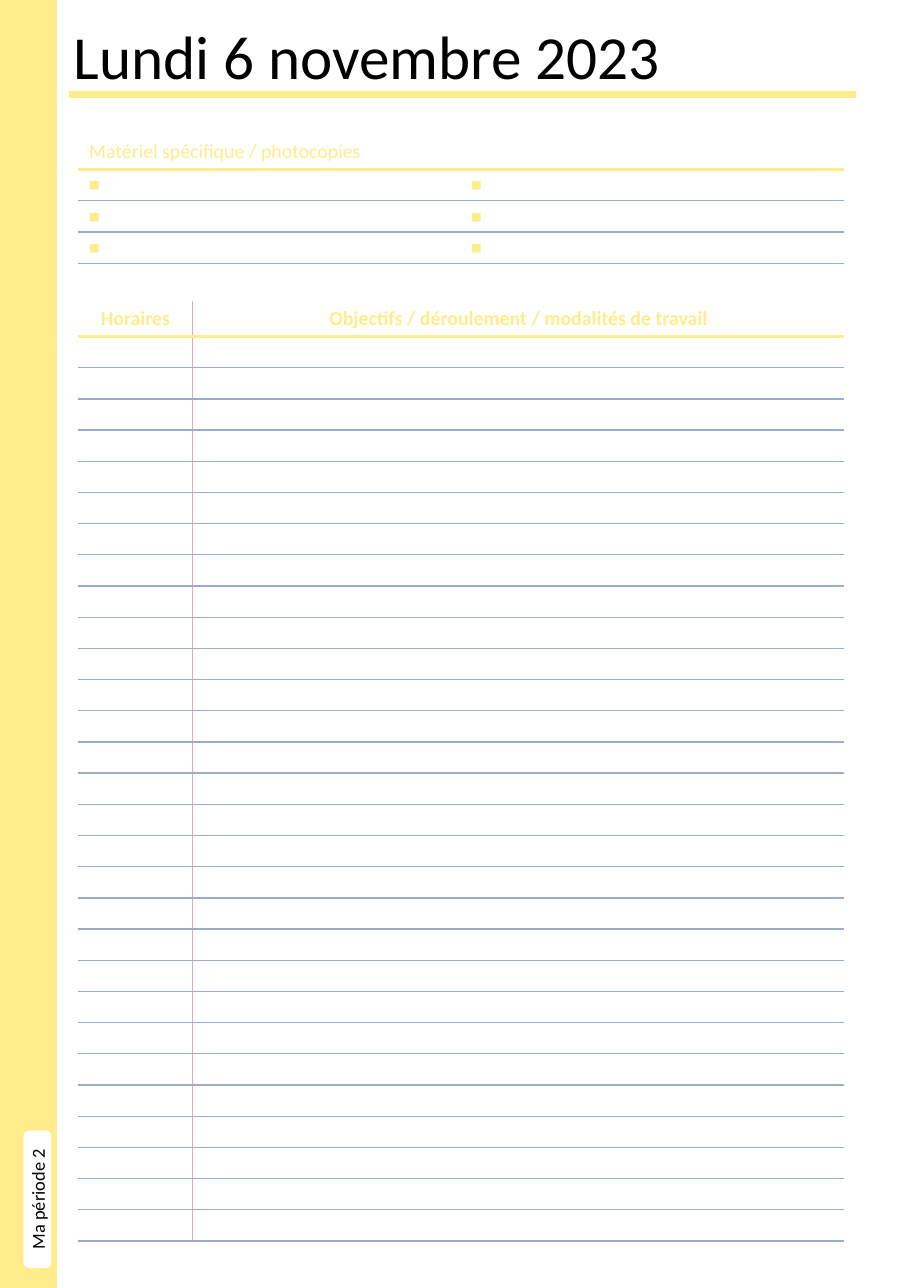
from dataclasses import dataclass

import pptx
import pptx.dml.color
import pptx.enum.dml
import pptx.enum.shapes
import pptx.enum.text
import pptx.oxml
import pptx.oxml.ns
import pptx.util

Pt = pptx.util.Pt
RGBColor = pptx.dml.color.RGBColor
ALIGN = pptx.enum.text.PP_ALIGN
ANCHOR = pptx.enum.text.MSO_ANCHOR
SHAPE = pptx.enum.shapes.MSO_SHAPE

YELLOW = RGBColor(0xFE, 0xED, 0x8A)
BLUE = RGBColor(0x9A, 0xAD, 0xCD)
PINK = RGBColor(0xDC, 0xA9, 0xCC)
WHITE = RGBColor(0xFF, 0xFF, 0xFF)
BLACK = RGBColor(0, 0, 0)

FONT = "Calibri"
PAGE_W, PAGE_H = 595.44, 841.68
TABLE_LEFT = 51.12
LINE_H = 20.4
BULLET = "◼︎"


@dataclass
class Grid:
    """A ruled table: one header row over evenly spaced writing lines."""
    top: float
    header_h: float
    col_widths: tuple[float, ...]
    headers: tuple[str, ...]
    lines: int
    mark: str = ""
    bold: bool = False
    align: ALIGN = ALIGN.LEFT
    divider: RGBColor = WHITE


GRIDS = [
    Grid(87.84, 23, (249.84, 250.56), ("Matériel spécifique / photocopies", ""),
         lines=3, mark=BULLET),
    Grid(197.28, 22.6, (74.88, 425.52),
         ("Horaires", "Objectifs / déroulement / modalités de travail"),
         lines=29, bold=True, align=ALIGN.CENTER, divider=PINK),
]


def add_run(p, text: str, size: float, color: RGBColor, bold: bool = False) -> None:
    r = p.add_run()
    r.text = text
    r.font.name = FONT
    r.font.size = Pt(size)
    r.font.bold = bold
    r.font.color.rgb = color


def set_margins(target, x: float, y: float) -> None:
    target.margin_left = target.margin_right = Pt(x)
    target.margin_top = target.margin_bottom = Pt(y)


def set_borders(cell, borders: dict[str, tuple[RGBColor, float]]) -> None:
    """Borders are keyed by side, in the order L, R, T, B."""
    ns = pptx.oxml.ns.nsdecls("a")
    tcPr = cell._tc.get_or_add_tcPr()
    for i, (side, (color, width)) in enumerate(borders.items()):
        tcPr.insert(i, pptx.oxml.parse_xml(
            f'<a:ln{side} {ns} w="{Pt(width)}"><a:solidFill>'
            f'<a:srgbClr val="{color}"/></a:solidFill></a:ln{side}>'))


def fill_cell(cell, text: str, size: float, bold: bool, align: ALIGN) -> None:
    cell.fill.solid()
    cell.fill.fore_color.rgb = WHITE
    cell.vertical_anchor = ANCHOR.MIDDLE
    set_margins(cell, 7.2, 3)
    p = cell.text_frame.paragraphs[0]
    p.alignment = align
    if text:
        add_run(p, text, size, YELLOW, bold)
    else:
        # Keeps an empty line from growing to the default text size
        p._p.append(pptx.oxml.parse_xml(
            f'<a:endParaRPr {pptx.oxml.ns.nsdecls("a")} sz="{size * 100}"/>'))


def add_grid(s, grid: Grid) -> None:
    n_rows, n_cols = grid.lines + 1, len(grid.col_widths)
    height = grid.header_h + grid.lines * LINE_H
    table = s.shapes.add_table(n_rows, n_cols, Pt(TABLE_LEFT), Pt(grid.top),
                               Pt(sum(grid.col_widths)), Pt(height)).table
    table.first_row = table.horz_banding = False
    for column, width in zip(table.columns, grid.col_widths):
        column.width = Pt(width)

    rules = [(WHITE, 1), (YELLOW, 2.25)] + [(BLUE, 1)] * grid.lines
    for i, row in enumerate(table.rows):
        row.height = Pt(LINE_H if i else grid.header_h)
        for j, cell in enumerate(row.cells):
            text, size = (grid.mark, 11) if i else (grid.headers[j], 13)
            fill_cell(cell, text, size, grid.bold, grid.align)
            set_borders(cell, {
                "L": (grid.divider if j else WHITE, 1),
                "R": (grid.divider if j < n_cols - 1 else WHITE, 1),
                "T": rules[i],
                "B": rules[i + 1],
            })


def add_block(s, kind: SHAPE, x: float, y: float, w: float, h: float,
              color: RGBColor):
    sp = s.shapes.add_shape(kind, Pt(x), Pt(y), Pt(w), Pt(h))
    sp.shadow.inherit = False
    sp.fill.solid()
    sp.fill.fore_color.rgb = color
    sp.line.color.rgb = color
    sp.line.width = Pt(1)
    return sp


def add_title(s, text: str) -> None:
    tf = s.shapes.add_textbox(Pt(41.04), Pt(8.64), Pt(527.04), Pt(55.44)).text_frame
    tf.word_wrap = True
    tf.auto_size = pptx.enum.text.MSO_AUTO_SIZE.SHAPE_TO_FIT_TEXT
    add_run(tf.paragraphs[0], text, 40, BLACK)

    rule = s.shapes.add_connector(pptx.enum.shapes.MSO_CONNECTOR.STRAIGHT,
                                  Pt(45.36), Pt(61.92), Pt(559.44), Pt(61.92))
    rule.line.color.rgb = YELLOW
    rule.line.width = Pt(4.75)
    rule.element.spPr.append(pptx.oxml.parse_xml(
        f'<a:effectLst {pptx.oxml.ns.nsdecls("a")}/>'))


def add_side_tab(s, text: str) -> None:
    add_block(s, SHAPE.RECTANGLE, 0, 0, 36.72, PAGE_H, YELLOW)
    sp = add_block(s, SHAPE.ROUNDED_RECTANGLE, 15.84, 739.44, 17.28, 88.56, WHITE)
    tf = sp.text_frame
    set_margins(tf, 0, 0)
    tf.vertical_anchor = ANCHOR.MIDDLE
    sp.element.txBody.bodyPr.set("vert", "vert270")
    p = tf.paragraphs[0]
    p.alignment = ALIGN.CENTER
    add_run(p, text, 12, BLACK)


def main() -> None:
    prs = pptx.Presentation()
    prs.slide_width, prs.slide_height = Pt(PAGE_W), Pt(PAGE_H)
    s = prs.slides.add_slide(prs.slide_layouts[6])

    # Day heading
    add_title(s, "Lundi 6 novembre 2023")

    # Materials list and timetable
    for grid in GRIDS:
        add_grid(s, grid)

    # Margin band with the period label
    add_side_tab(s, "Ma période 2")

    prs.save("out.pptx")


if __name__ == "__main__":
    main()
